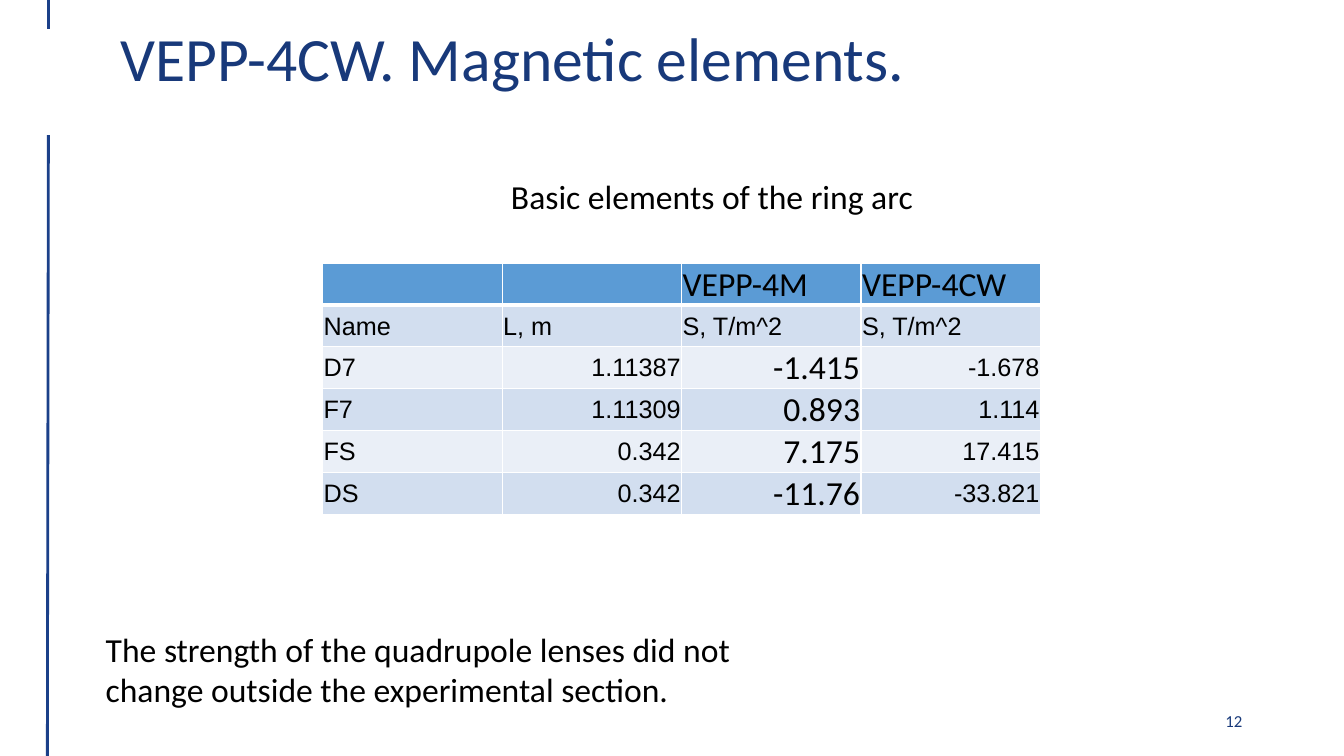
from dataclasses import dataclass

from lxml.etree import SubElement
from pptx import Presentation
from pptx.dml.color import RGBColor
from pptx.enum.shapes import MSO_CONNECTOR
from pptx.enum.text import MSO_ANCHOR, PP_ALIGN
from pptx.oxml.ns import qn
from pptx.util import Emu, Pt

EMU_PER_PX = 9144


@dataclass(frozen=True)
class Theme:
    rule: str = "1B4089"
    accent: str = "18397A"
    ink: str = "000000"
    grid: str = "FFFFFF"
    header_fill: str = "5B9BD5"
    bands: tuple = ("EAEFF7", "D2DEEF")
    font: str = "Calibri"
    table_font: str = "Arial"
    title_size: int = 44
    text_size: int = 24
    table_size: int = 18
    number_size: int = 12


THEME = Theme()

MAGNETS = [
    ("", "", "VEPP-4M", "VEPP-4CW"),
    ("Name", "L, m", "S, T/m^2", "S, T/m^2"),
    ("D7", "1.11387", "-1.415", "-1.678"),
    ("F7", "1.11309", "0.893", "1.114"),
    ("FS", "0.342", "7.175", "17.415"),
    ("DS", "0.342", "-11.76", "-33.821"),
]
VEPP_4M_COLUMN = 2
FIRST_MAGNET_ROW = 2


def px(length):
    return Emu(length * EMU_PER_PX)


def add_run(paragraph, text, size, color=THEME.ink, font=THEME.font):
    run = paragraph.add_run()
    run.text = text
    run.font.size = Pt(size)
    run.font.name = font
    run.font.color.rgb = RGBColor.from_string(color)


def add_rule(slide, x1, y1, x2, y2):
    rule = slide.shapes.add_connector(
        MSO_CONNECTOR.STRAIGHT, px(x1), px(y1), px(x2), px(y2))
    rule.line.color.rgb = RGBColor.from_string(THEME.rule)
    rule.line.width = Pt(2)
    SubElement(rule._element.spPr, qn("a:effectLst"))


def set_title(slide, text, left, top, width, height):
    title = slide.shapes.title
    title.left, title.top = px(left), px(top)
    title.width, title.height = px(width), px(height)
    title.text_frame.vertical_anchor = MSO_ANCHOR.MIDDLE
    heading = title.text_frame.paragraphs[0]
    heading.alignment = PP_ALIGN.LEFT
    heading.line_spacing = 0.9
    add_run(heading, text, THEME.title_size, THEME.accent)


def add_text(slide, text, left, top, width, height, size=THEME.text_size,
             color=THEME.ink, align=PP_ALIGN.LEFT, anchor=MSO_ANCHOR.TOP,
             margin_right=10):
    box = slide.shapes.add_textbox(px(left), px(top), px(width), px(height))
    frame = box.text_frame
    frame.word_wrap = True
    frame.vertical_anchor = anchor
    frame.margin_right = px(margin_right)
    frame.paragraphs[0].alignment = align
    add_run(frame.paragraphs[0], text, size, color)


def add_border(cell, side, points):
    line = SubElement(cell._tc.get_or_add_tcPr(), qn(f"a:ln{side}"), w=str(Pt(points)))
    fill = SubElement(line, qn("a:solidFill"))
    SubElement(fill, qn("a:srgbClr"), val=THEME.grid)


def format_cell(cell, text, row, column):
    is_header = row == 0
    is_magnet = row >= FIRST_MAGNET_ROW
    is_large = is_header or (is_magnet and column == VEPP_4M_COLUMN)
    cell.margin_left = cell.margin_top = cell.margin_right = px(1)
    cell.margin_bottom = 0
    cell.vertical_anchor = MSO_ANCHOR.BOTTOM if is_large else MSO_ANCHOR.MIDDLE
    for side in "LRTB":
        under_header = (row, side) in ((0, "B"), (1, "T"))
        add_border(cell, side, 3 if under_header else 1)
    cell.fill.solid()
    fill = THEME.header_fill if is_header else THEME.bands[row % 2]
    cell.fill.fore_color.rgb = RGBColor.from_string(fill)
    if text:
        entry = cell.text_frame.paragraphs[0]
        entry.alignment = PP_ALIGN.RIGHT if is_magnet and column else PP_ALIGN.LEFT
        size = THEME.text_size if is_large else THEME.table_size
        font = THEME.font if is_large else THEME.table_font
        add_run(entry, text, size, font=font)
        entry.runs[0].font.bold = False


def add_magnet_table(slide, left, top, column_width, row_height):
    rows, columns = len(MAGNETS), len(MAGNETS[0])
    table = slide.shapes.add_table(
        rows, columns, px(left), px(top),
        px(columns * column_width), px(rows * row_height)).table
    for row, entries in enumerate(MAGNETS):
        for column, text in enumerate(entries):
            format_cell(table.cell(row, column), text, row, column)


def main():
    presentation = Presentation()
    presentation.slide_width, presentation.slide_height = px(1333), px(750)
    slide = presentation.slides.add_slide(presentation.slide_layouts[5])
    add_rule(slide, 48, 134, 47, 750)
    add_rule(slide, 48, 0, 48, 29)
    set_title(slide, "VEPP-4CW. Magnetic elements.", 110, 16, 1150, 90)
    add_magnet_table(slide, 320, 261, 178, 41)
    add_text(slide, "Basic elements of the ring arc", 497, 170, 423, 50)
    add_text(slide, "The strength of the quadrupole lenses did not change "
             "outside the experimental section.", 95, 619, 743, 91,
             margin_right=40)
    add_text(slide, "12", 942, 695, 300, 40, THEME.number_size, THEME.accent,
             PP_ALIGN.RIGHT, MSO_ANCHOR.MIDDLE)
    presentation.save("out.pptx")


if __name__ == "__main__":
    main()
